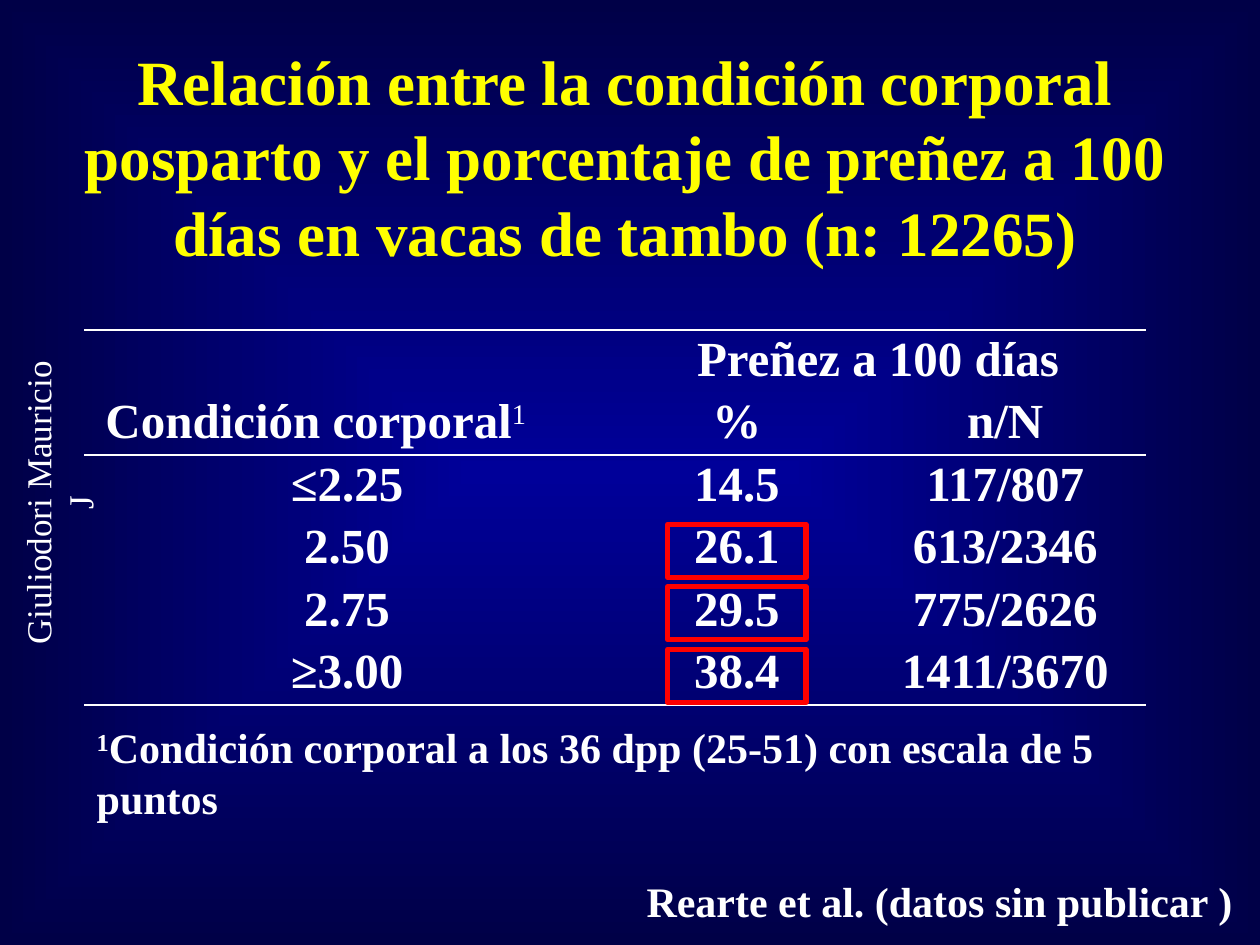
import pptx
import pptx.dml.color
import pptx.enum.shapes
import pptx.enum.text
import pptx.oxml
import pptx.oxml.ns
import pptx.util
from pptx.util import Cm

FONT = "Times New Roman"
WHITE, YELLOW, RED = "FFFFFF", "FFFF00", "FF0000"
CENTER_COLOR, EDGE_COLOR = "000099", "000047"
ALIGN = pptx.enum.text.PP_ALIGN
ANCHOR = pptx.enum.text.MSO_ANCHOR
NAMESPACES = pptx.oxml.ns.nsdecls("a", "p")

TITLE = ("Relación entre la condición corporal posparto y el porcentaje "
         "de preñez a 100 días en vacas de tambo (n: 12265)")
AUTHOR = "Giuliodori Mauricio J"
CREDIT = "Rearte et al. (datos sin publicar )"
FOOTNOTE = [("1", 30), ("Condición corporal a los 36 dpp (25-51) con escala de 5 puntos", 0)]
ROWS = [
    ("", "Preñez a 100 días", ""),
    (" Condición corporal", "%", "n/N"),
    ("≤2.25", "14.5", "117/807"),
    ("2.50", "26.1", "613/2346"),
    ("2.75", "29.5", "775/2626"),
    ("≥3.00", "38.4", "1411/3670"),
]
HEADER_ROW = 1
RULED_TOP = {0, 2}
RULED_BOTTOM = {1, 5}
HIGHLIGHTED_ROWS = (3, 4, 5)
COLUMN_WIDTHS = [10.59, 5.13, 5.69]
ROW_HEIGHT = 1.26
TABLE_LEFT, TABLE_TOP = 1.7, 6.65
BOX_WIDTH, BOX_HEIGHT, BOX_OFFSET = 2.79, 1.07, 0.14


def color(value):
    return pptx.dml.color.RGBColor.from_string(value)


def add_run(paragraph, text, size, fill=WHITE, bold=True, baseline=0):
    run = paragraph.add_run()
    run.text = text
    run.font.name = FONT
    run.font.size = pptx.util.Pt(size)
    run.font.bold = bold
    run.font.color.rgb = color(fill)
    if baseline:
        run.font._element.set("baseline", str(baseline * 1000))


def add_text(slide, place, runs, size, align=ALIGN.CENTER, anchor=ANCHOR.TOP,
             fill=WHITE, bold=True, wrap=True):
    shape = slide.shapes.add_textbox(*map(Cm, place))
    frame = shape.text_frame
    frame.word_wrap = wrap
    frame.vertical_anchor = anchor
    paragraph = frame.paragraphs[0]
    paragraph.alignment = align
    for text, baseline in runs:
        add_run(paragraph, text, size, fill, bold, baseline)
    return shape


def set_background(slide):
    stops = "".join(
        f'<a:gs pos="{position}"><a:srgbClr val="{value}"/></a:gs>'
        for position, value in ((0, CENTER_COLOR), (100000, EDGE_COLOR)))
    background = pptx.oxml.parse_xml(
        f'<p:bg {NAMESPACES}><p:bgPr><a:gradFill rotWithShape="0"><a:gsLst>{stops}</a:gsLst>'
        '<a:path path="shape"><a:fillToRect l="50000" t="50000" r="50000" b="50000"/></a:path>'
        '</a:gradFill><a:effectLst/></p:bgPr></p:bg>')
    slide._element.cSld.insert(0, background)


def set_borders(cell, row):
    ruled = {"lnT": row in RULED_TOP, "lnB": row in RULED_BOTTOM}
    properties = cell._tc.get_or_add_tcPr()
    for index, side in enumerate(("lnL", "lnR", "lnT", "lnB")):
        paint = "<a:noFill/>"
        if ruled.get(side):
            paint = f'<a:solidFill><a:srgbClr val="{WHITE}"/></a:solidFill>'
        properties.insert(index, pptx.oxml.parse_xml(
            f'<a:{side} {NAMESPACES} w="12700">{paint}</a:{side}>'))


def add_results(slide):
    frame = slide.shapes.add_table(
        len(ROWS), len(COLUMN_WIDTHS), Cm(TABLE_LEFT), Cm(TABLE_TOP),
        Cm(sum(COLUMN_WIDTHS)), Cm(ROW_HEIGHT * len(ROWS)))
    table = frame.table
    table.first_row = table.horz_banding = False
    for column, width in zip(table.columns, COLUMN_WIDTHS):
        column.width = Cm(width)
    for row, texts in enumerate(ROWS):
        table.rows[row].height = Cm(ROW_HEIGHT)
        for column, text in enumerate(texts):
            cell = table.cell(row, column)
            cell.margin_left = cell.margin_right = Cm(0.18)
            cell.margin_top = cell.margin_bottom = 0
            cell.fill.background()
            set_borders(cell, row)
            if not text:
                continue
            heading = row == HEADER_ROW and column == 0
            paragraph = cell.text_frame.paragraphs[0]
            paragraph.alignment = ALIGN.JUSTIFY if heading else ALIGN.CENTER
            paragraph.line_spacing = 1.05
            add_run(paragraph, text, 28)
            if heading:
                add_run(paragraph, "1", 28, bold=False, baseline=30)
    table.cell(0, 1).merge(table.cell(0, 2))


def add_highlights(slide):
    left = TABLE_LEFT + COLUMN_WIDTHS[0] + (COLUMN_WIDTHS[1] - BOX_WIDTH) / 2
    for row in HIGHLIGHTED_ROWS:
        top = TABLE_TOP + row * ROW_HEIGHT + BOX_OFFSET
        shape = slide.shapes.add_shape(
            pptx.enum.shapes.MSO_SHAPE.RECTANGLE,
            Cm(left), Cm(top), Cm(BOX_WIDTH), Cm(BOX_HEIGHT))
        shape.shadow.inherit = False
        shape.fill.background()
        shape.line.color.rgb = color(RED)
        shape.line.width = pptx.util.Pt(3)


def main():
    presentation = pptx.Presentation()
    presentation.slide_width, presentation.slide_height = Cm(25.4), Cm(19.05)
    slide = presentation.slides.add_slide(presentation.slide_layouts[6])
    set_background(slide)
    add_text(slide, (0.5, 1.55, 24.2, 3.18), [(TITLE, 0)], 36,
             anchor=ANCHOR.MIDDLE, fill=YELLOW)
    add_results(slide)
    add_highlights(slide)
    author = add_text(slide, (-2.46, 9.58, 6.45, 1.12), [(AUTHOR, 0)], 20, bold=False)
    author.rotation = 270
    add_text(slide, (12.78, 17.53, 12.32, 1.27), [(CREDIT, 0)], 24, wrap=False)
    add_text(slide, (1.7, 14.43, 21.01, 2.31), FOOTNOTE, 24, align=ALIGN.LEFT)
    presentation.save("out.pptx")


if __name__ == "__main__":
    main()
